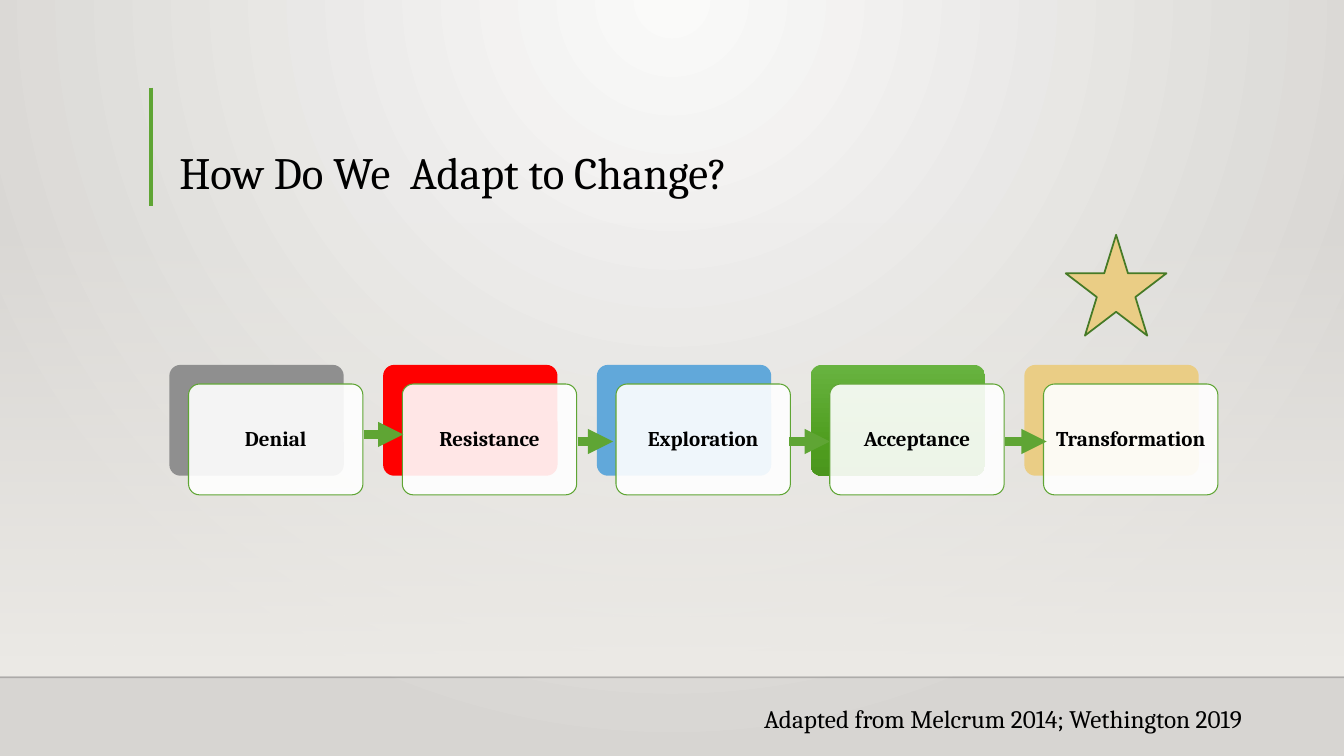
import pptx
import pptx.util
import pptx.dml.color
import pptx.enum.shapes
import pptx.enum.text
import pptx.oxml
import pptx.oxml.ns
import lxml.etree

Inches = pptx.util.Inches
RGBColor = pptx.dml.color.RGBColor
Shape = pptx.enum.shapes.MSO_SHAPE
Anchor = pptx.enum.text.MSO_ANCHOR
Align = pptx.enum.text.PP_ALIGN
qn = pptx.oxml.ns.qn

BLACK = RGBColor(0x00, 0x00, 0x00)
WHITE = RGBColor(0xFF, 0xFF, 0xFF)
GREEN = RGBColor(0x5F, 0xA5, 0x34)
DARK_GREEN = RGBColor(0x46, 0x7A, 0x26)
GRAY = RGBColor(0x8F, 0x8F, 0x8F)
RED = RGBColor(0xFF, 0x00, 0x00)
BLUE = RGBColor(0x61, 0xA8, 0xDA)
GOLD = RGBColor(0xEA, 0xCD, 0x85)
PALE = RGBColor(0xFA, 0xFA, 0xF9)
STONE = RGBColor(0xD7, 0xD5, 0xD2)
HAZE = RGBColor(0xED, 0xEB, 0xE7)
LEAF_LIGHT = RGBColor(0x68, 0xB3, 0x40)
LEAF_MIDDLE = RGBColor(0x4F, 0x9E, 0x1F)
LEAF_DARK = RGBColor(0x4B, 0x96, 0x1D)

FONT = "Cambria"
DOWNWARD = '<a:lin ang="5400000" scaled="0"/>'
FROM_TOP = '<a:path path="circle"><a:fillToRect l="43000" t="0" r="43000" b="100000"/></a:path>'
LEAF = [(0, LEAF_LIGHT, 100), (69, LEAF_MIDDLE, 100), (100, LEAF_DARK, 100)]
STAGES = [("Denial", GRAY), ("Resistance", RED), ("Exploration", BLUE),
          ("Acceptance", LEAF), ("Transformation", GOLD)]
ARROWS = [(3.61, 4, 4.31), (5.73, 6.08, 4.38), (7.83, 8.23, 4.38), (9.97, 10.38, 4.38)]
STAGE_LEFT, STAGE_TOP, STAGE_PITCH = 1.68, 3.62, 2.12
CARD_SHIFT = 0.19


def set_gradient(fill, owner, stops, direction):
    """Fill the owner element with (position, colour, opacity) stops."""
    fill.gradient()
    old = owner.find(".//" + qn("a:gradFill"))
    marks = "".join(
        f'<a:gs pos="{place * 1000}"><a:srgbClr val="{color}">'
        f'<a:alpha val="{opacity * 1000}"/></a:srgbClr></a:gs>'
        for place, color, opacity in stops)
    new = pptx.oxml.parse_xml(
        f'<a:gradFill {pptx.oxml.ns.nsdecls("a")} rotWithShape="1">'
        f'<a:gsLst>{marks}</a:gsLst>{direction}</a:gradFill>')
    old.getparent().replace(old, new)


def set_opacity(element, percent):
    """Make the first solid colour in an element translucent."""
    color = element.find(".//" + qn("a:srgbClr"))
    lxml.etree.SubElement(color, qn("a:alpha")).set("val", str(percent * 1000))


def add_shape(page, kind, left, top, width, height, fill, line=None, weight=0.75):
    """Add a preset shape with a solid or gradient fill."""
    shape = page.shapes.add_shape(kind, Inches(left), Inches(top), Inches(width), Inches(height))
    shape.shadow.inherit = False
    if isinstance(fill, list):
        set_gradient(shape.fill, shape._element.spPr, fill, DOWNWARD)
    else:
        shape.fill.solid()
        shape.fill.fore_color.rgb = fill
    if line is None:
        shape.line.fill.background()
    else:
        shape.line.color.rgb = line
        shape.line.width = pptx.util.Pt(weight)
    return shape


def add_line(page, start, end, color, weight, arrow=False):
    """Add a straight line, with an arrowhead at its end if asked."""
    line = page.shapes.add_connector(
        pptx.enum.shapes.MSO_CONNECTOR.STRAIGHT, *map(Inches, start + end))
    line.line.color.rgb = color
    line.line.width = pptx.util.Pt(weight)
    properties = line._element.spPr
    if arrow:
        outline = properties.find(qn("a:ln"))
        lxml.etree.SubElement(outline, qn("a:tailEnd")).set("type", "triangle")
    lxml.etree.SubElement(properties, qn("a:effectLst"))
    return line


def write(para, text, size, bold=False):
    """Write black text into a paragraph."""
    para.text = text
    para.font.name = FONT
    para.font.size = pptx.util.Pt(size)
    para.font.bold = bold
    para.font.color.rgb = BLACK


def add_text(page, left, top, width, height, text, size, anchor=Anchor.TOP, wrap=True):
    """Add a text box holding one paragraph."""
    box = page.shapes.add_textbox(Inches(left), Inches(top), Inches(width), Inches(height))
    box.text_frame.word_wrap = wrap
    box.text_frame.vertical_anchor = anchor
    para = box.text_frame.paragraphs[0]
    write(para, text, size)
    return para


def add_stage(page, left, label, fill):
    """Add a coloured block with a labelled card in front of it."""
    block = add_shape(page, Shape.ROUNDED_RECTANGLE, left, STAGE_TOP, 1.73, 1.1, fill)
    card = add_shape(page, Shape.ROUNDED_RECTANGLE, left + CARD_SHIFT, STAGE_TOP + CARD_SHIFT,
                     1.73, 1.1, WHITE, GREEN)
    block.adjustments[0] = card.adjustments[0] = 0.1
    set_opacity(card._element.spPr, 90)
    frame = card.text_frame
    frame.margin_left = frame.margin_right = Inches(0.06)
    frame.margin_top = frame.margin_bottom = Inches(0.06)
    frame.word_wrap = True
    frame.vertical_anchor = Anchor.MIDDLE
    para = frame.paragraphs[0]
    para.alignment = Align.CENTER
    para.line_spacing = 0.9
    write(para, label, 15, bold=True)


def main():
    """Build the slide on adapting to change."""
    deck = pptx.Presentation()
    deck.slide_width, deck.slide_height = Inches(13.33), Inches(7.5)
    page = deck.slides.add_slide(deck.slide_layouts[6])
    set_gradient(page.background.fill, page._element,
                 [(0, PALE, 100), (100, STONE, 100)], FROM_TOP)
    add_shape(page, Shape.RECTANGLE, 0, 2.2, 13.33, 4.5, [(0, HAZE, 0), (100, HAZE, 100)])
    footer_line = add_line(page, (0, 6.72), (13.33, 6.72), BLACK, 1)
    set_opacity(footer_line._element.spPr, 20)
    add_line(page, (1.5, 0.87), (1.5, 2.04), GREEN, 3)

    title = add_text(page, 1.68, 0.88, 10.41, 1.15, "How Do We  Adapt to Change?", 32,
                     anchor=Anchor.BOTTOM)
    title.line_spacing = 0.9
    credit = add_text(page, 7.48, 6.93, 5.46, 0.4,
                      "Adapted from Melcrum 2014; Wethington 2019", 18, wrap=False)
    credit.space_after = pptx.util.Pt(6)

    for index, (label, fill) in enumerate(STAGES):
        add_stage(page, STAGE_LEFT + index * STAGE_PITCH, label, fill)
    add_shape(page, Shape.STAR_5_POINT, 10.57, 2.33, 1, 1, GOLD, DARK_GREEN, 1.25)
    for start, end, height in ARROWS:
        add_line(page, (start, height), (end, height), GREEN, 6, arrow=True)

    deck.save("out.pptx")


if __name__ == "__main__":
    main()
